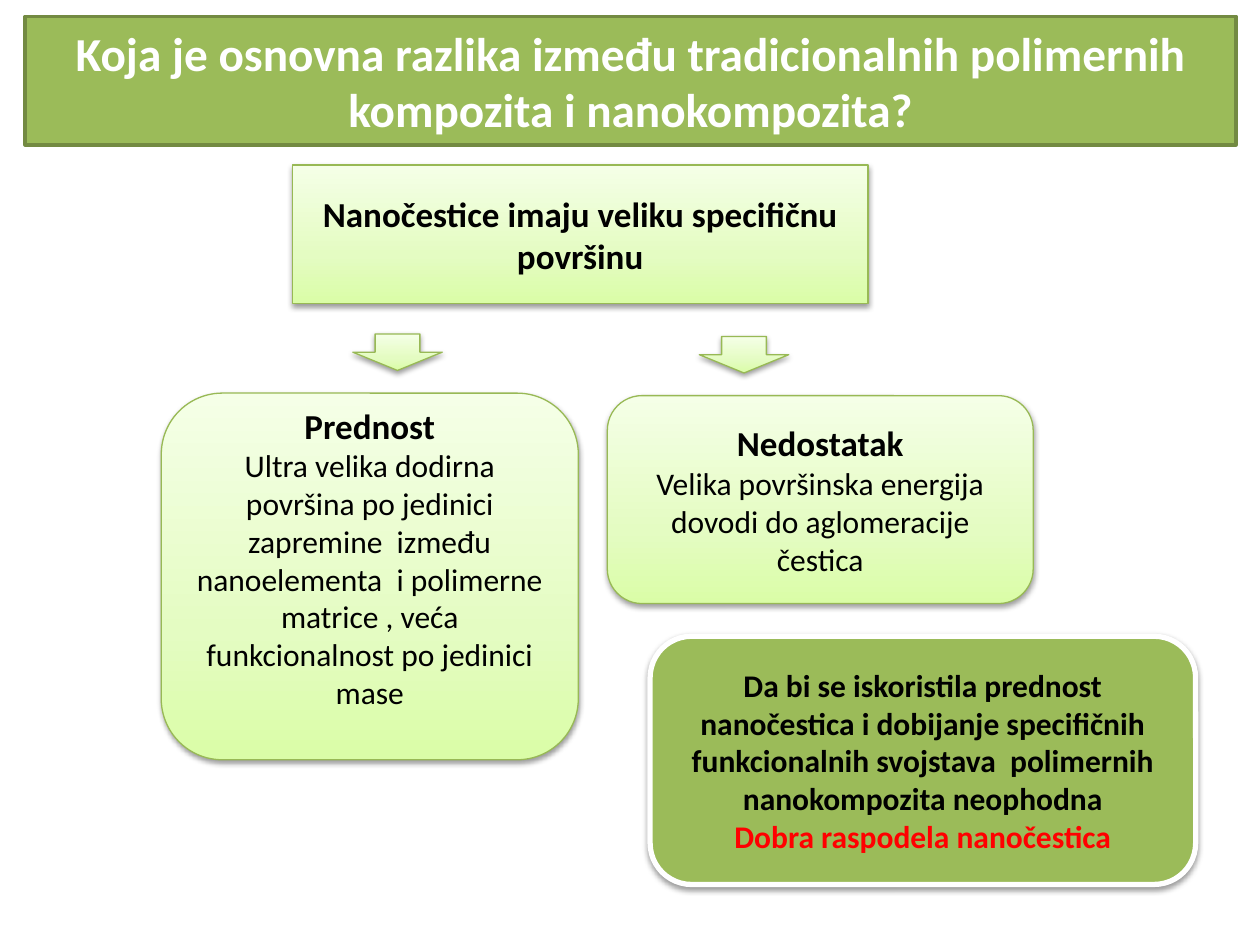
import copy

import pptx
import pptx.dml.color
import pptx.enum.shapes
import pptx.enum.text
import pptx.oxml
import pptx.oxml.ns
import pptx.util

Inches = pptx.util.Inches
Kind = pptx.enum.shapes.MSO_SHAPE
HUES = {
    "green": "9BBB59", "edge": "738A42", "rim": "98B955",
    "low": "DAFDA7", "mid": "E4FCC2", "high": "F5FFE7",
    "white": "FFFFFF", "black": "000000", "red": "FF0000",
}
BODY = {
    "word_wrap": True,
    "vertical_anchor": pptx.enum.text.MSO_ANCHOR.MIDDLE,
}
STOPS = (("low", 0), ("mid", 0.35), ("high", 1))


def rgb(hue):
    return pptx.dml.color.RGBColor.from_string(HUES[hue])


def apply(item, values):
    for name, value in values.items():
        setattr(item, name, value)


def shade(shape):
    """Fill with the pale green gradient, darkest at the foot."""
    fill = shape.fill
    fill.gradient()
    fill.gradient_angle = 90
    stops = shape._element.spPr.find(".//" + pptx.oxml.ns.qn("a:gsLst"))
    stops.insert(1, copy.deepcopy(stops[0]))
    for stop, (hue, place) in zip(fill.gradient_stops, STOPS):
        stop.color.rgb = rgb(hue)
        stop.position = place


def lift(shape):
    """Add a soft shadow below the shape."""
    shadow = pptx.oxml.parse_xml(
        f'<a:outerShdw {pptx.oxml.ns.nsdecls("a")} blurRad="40000" '
        'dist="20000" dir="5400000" rotWithShape="0">'
        f'<a:srgbClr val="{HUES["black"]}"><a:alpha val="38000"/>'
        '</a:srgbClr></a:outerShdw>')
    effects = shape._element.spPr.find(pptx.oxml.ns.qn("a:effectLst"))
    effects.append(shadow)


def add_box(slide, kind, area, rim="rim", width=0.75, plain=False, raised=True):
    shape = slide.shapes.add_shape(kind, *map(Inches, area))
    shape.shadow.inherit = False
    if plain:
        shape.fill.solid()
        shape.fill.fore_color.rgb = rgb("green")
    else:
        shade(shape)
    if raised:
        lift(shape)
    shape.line.color.rgb = rgb(rim)
    shape.line.width = pptx.util.Pt(width)
    return shape


def write(shape, *lines):
    """Write one paragraph for each (text, size, bold, hue)."""
    frame = shape.text_frame
    apply(frame, BODY)
    for i, (text, size, bold, hue) in enumerate(lines):
        para = frame.paragraphs[0] if i == 0 else frame.add_paragraph()
        para.alignment = pptx.enum.text.PP_ALIGN.CENTER
        run = para.add_run()
        run.text = text
        apply(run.font, {"name": "Calibri", "size": pptx.util.Pt(size),
                         "bold": bold})
        run.font.color.rgb = rgb(hue)


def main():
    deck = pptx.Presentation()
    apply(deck, {"slide_width": Inches(10), "slide_height": Inches(7.5)})
    slide = deck.slides.add_slide(deck.slide_layouts[6])

    title = add_box(slide, Kind.RECTANGLE, (0.2, 0.13, 9.61, 1.02),
                    rim="edge", width=2, plain=True, raised=False)
    write(title, ("Koja je osnovna razlika između tradicionalnih polimernih "
                  "kompozita i nanokompozita?", 27, True, "white"))

    cause = add_box(slide, Kind.RECTANGLE, (2.32, 1.31, 4.57, 1.1))
    write(cause, ("Nanočestice imaju veliku specifičnu površinu",
                  20, True, "black"))

    gain = add_box(slide, Kind.ROUNDED_RECTANGLE, (1.28, 3.12, 3.31, 2.91))
    write(gain, ("Prednost", 20, True, "black"),
          ("Ultra velika dodirna površina po jedinici zapremine  između "
           "nanoelementa  i polimerne matrice , veća funkcionalnost po "
           "jedinici mase", 18, False, "black"))
    gain.text_frame.margin_bottom = Inches(0.35)

    loss = add_box(slide, Kind.ROUNDED_RECTANGLE, (4.82, 3.14, 3.38, 1.65))
    write(loss, ("Nedostatak", 20, True, "black"),
          ("Velika površinska energija dovodi do aglomeracije čestica",
           18, False, "black"))

    for left, top in ((2.8, 2.65), (5.55, 2.67)):
        add_box(slide, Kind.DOWN_ARROW, (left, top, 0.71, 0.29))

    need = add_box(slide, Kind.ROUNDED_RECTANGLE, (5.16, 5.05, 4.33, 1.97),
                   rim="white", width=3, plain=True)
    write(need, ("Da bi se iskoristila prednost nanočestica i dobijanje "
                 "specifičnih funkcionalnih svojstava  polimernih "
                 "nanokompozita neophodna", 18, True, "black"),
          ("Dobra raspodela nanočestica", 18, True, "red"))

    deck.save("out.pptx")


if __name__ == "__main__":
    main()
